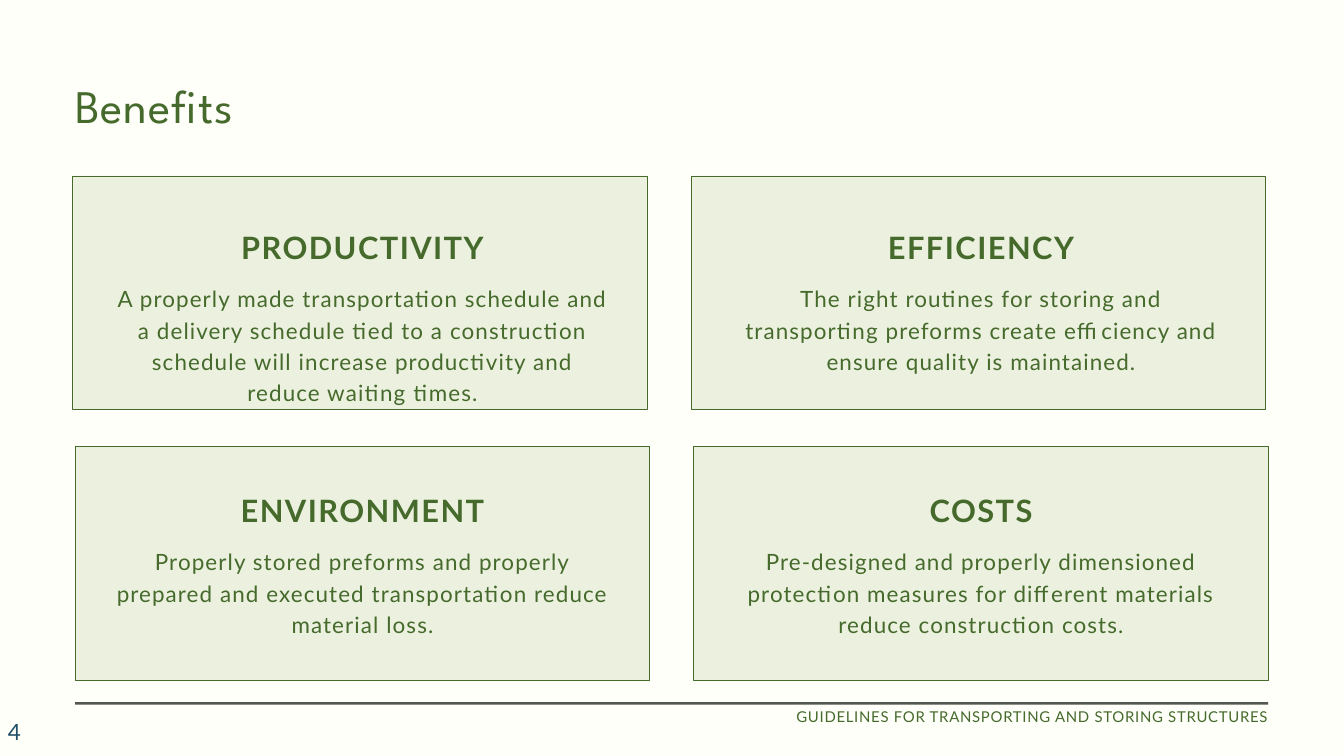
"""Build the Benefits slide: four cards in a grid, with a footer."""
from pptx import Presentation
from pptx.dml.color import RGBColor as RGB
from pptx.enum.shapes import MSO_SHAPE as Shape
from pptx.enum.text import MSO_ANCHOR as Anchor, PP_ALIGN as Align
from pptx.util import Cm, Pt

GREEN = "456A2C"


def paint(fill, color):
    fill.solid()
    fill.fore_color.rgb = RGB.from_string(color)


def write(text, left, top, width, height, size=24, font="Lato", color=GREEN,
          bold=False, gap=1.2, lead=None, align=Align.LEFT, pad=0,
          anchor=Anchor.TOP):
    box = slide.shapes.add_textbox(Cm(left), Cm(top), Cm(width), Cm(height))
    frame = box.text_frame
    frame.word_wrap = True
    frame.vertical_anchor = anchor
    frame.margin_left = frame.margin_right = Cm(pad)
    frame.margin_top = frame.margin_bottom = Cm(pad / 2)
    para = frame.paragraphs[0]
    para.alignment = align
    if lead:
        para.line_spacing = Pt(lead)
    run = para.add_run()
    run.text = text
    run.font.name = font
    run.font.size = Pt(size)
    run.font.bold = bold
    paint(run.font.fill, color)
    run.font._element.set("spc", str(round(gap * 100)))


deck = Presentation()
deck.slide_width, deck.slide_height = Cm(50.8), Cm(28.58)
slide = deck.slides.add_slide(deck.slide_layouts[6])
paint(slide.background.fill, "FEFFF8")

write("Benefits", 2.84, 2.67, 19.69, 2.39, size=50, font="League Spartan",
      gap=1, lead=66.8)

rows = [
    (2.74, 6.65, 8.59, [
        ("PRODUCTIVITY", "A properly made transportation schedule and a "
         "delivery schedule tied to a construction schedule will increase "
         "productivity and reduce waiting times.", 4.75),
        ("EFFICIENCY", "The right routines for storing and transporting "
         "preforms create efficiency and ensure quality is maintained.", 3.56),
    ]),
    (2.84, 16.87, 18.54, [
        ("ENVIRONMENT", "Properly stored preforms and properly prepared and "
         "executed transportation reduce material loss.", 3.56),
        ("COSTS", "Pre-designed and properly dimensioned protection measures "
         "for different materials reduce construction costs.", 3.56),
    ]),
]
for left, top, head, cards in rows:
    for col, (title, body, height) in enumerate(cards):
        shift = col * 23.38
        card = slide.shapes.add_shape(
            Shape.RECTANGLE, Cm(left + shift), Cm(top), Cm(21.72), Cm(8.84))
        card.shadow.inherit = False
        paint(card.fill, "EBF1DE")
        paint(card.line.fill, GREEN)
        card.line.width = Pt(0.75)
        write(title, 4.32 + shift, head, 18.77, 1.42, size=33, bold=True,
              gap=1.6, lead=41.2, align=Align.CENTER)
        write(body, 4.32 + shift, head + 2.03, 18.77, height, lead=33.6,
              align=Align.CENTER)

rule = slide.shapes.add_shape(
    Shape.RECTANGLE, Cm(2.84), Cm(26.54), Cm(45.09), Cm(0.1))
rule.shadow.inherit = False
paint(rule.fill, "52584D")
rule.line.fill.background()

write("4", 0.05, 27.15, 5.92, 1.02, color="1E4D65", pad=0.25,
      anchor=Anchor.MIDDLE)
write("GUIDELINES FOR TRANSPORTING AND STORING STRUCTURES", 26.82, 26.64,
      21.13, 2.29, size=16, gap=0.8, lead=22.4, align=Align.RIGHT)

deck.save("out.pptx")
